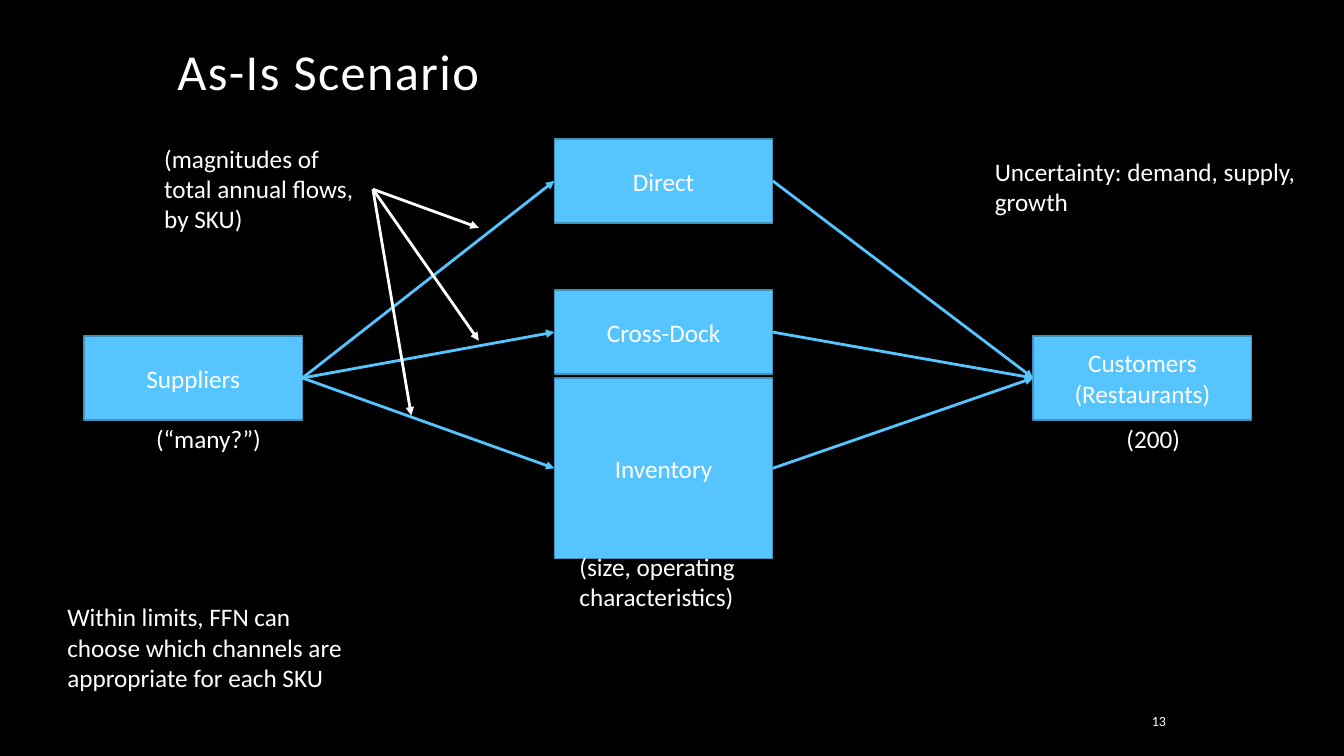
"""Build the As-Is Scenario supply network slide."""
from dataclasses import dataclass

from lxml import etree
from pptx import Presentation
from pptx.dml.color import RGBColor
from pptx.enum.shapes import MSO_CONNECTOR, MSO_SHAPE
from pptx.enum.text import MSO_ANCHOR, MSO_AUTO_SIZE, PP_ALIGN
from pptx.oxml.ns import qn
from pptx.util import Pt

RECT = MSO_SHAPE.RECTANGLE
STRAIGHT = MSO_CONNECTOR.STRAIGHT
TOP, MIDDLE = MSO_ANCHOR.TOP, MSO_ANCHOR.MIDDLE
LEFT, CENTER, RIGHT = PP_ALIGN.LEFT, PP_ALIGN.CENTER, PP_ALIGN.RIGHT
NO_FIT = MSO_AUTO_SIZE.NONE
LEFT_SIDE, RIGHT_SIDE = 1, 3
FONT = "Calibri"
BLACK, WHITE, BLUE, EDGE = "000000", "FFFFFF", "56C5FF", "4092BD"


@dataclass
class Node:
    name: str
    x: float
    y: float
    h: float = 60
    w: float = 156


@dataclass
class Note:
    text: str
    x: float
    y: float
    w: float
    h: float
    wrap: bool = True
    size: float = 18
    align: PP_ALIGN = LEFT
    anchor: MSO_ANCHOR = TOP


SUPPLIERS = Node("Suppliers", 60, 240)
CUSTOMERS = Node("Customers (Restaurants)", 738, 240)
CHANNELS = [
    Node("Direct", 396, 99.25),
    Node("Cross-Dock", 396, 207.25),
    Node("Inventory", 396, 270, h=129),
]
NOTES = [
    Note("(200)", 797.5, 298.8, 53.5, 29, wrap=False),
    Note("(“many?”)", 104.4, 298.8, 89, 29, wrap=False),
    Note("(size, operating characteristics)", 406.8, 390.2, 147, 51),
    Note("Within limits, FFN can choose which channels are appropriate for each SKU",
         41, 426.2, 229, 72.7),
    Note("Uncertainty: demand, supply, growth", 703.5, 108, 229, 51),
    Note("(magnitudes of total annual flows, by SKU)", 110.2, 98.7, 156, 72.7),
    Note("13", 774, 504, 66, 21.6, size=10, align=RIGHT, anchor=MIDDLE),
]
FLOW_START = (266.4, 135.2)
FLOW_ENDS = [(342, 162.7), (342, 243.4), (293.8, 296.8)]


def rgb(value: str) -> RGBColor:
    return RGBColor.from_string(value)


def write(tf, text: str, *, size: float = 18, align=LEFT, anchor=TOP,
          wrap: bool = True, line_spacing: float = 1, tracking: int = 0) -> None:
    tf.auto_size = NO_FIT
    tf.word_wrap = wrap
    tf.vertical_anchor = anchor
    p = tf.paragraphs[0]
    p.alignment = align
    p.line_spacing = line_spacing
    r = p.add_run()
    r.text = text
    r.font.name = FONT
    r.font.size = Pt(size)
    r.font.color.rgb = rgb(WHITE)
    if tracking:
        r.font._element.set("spc", str(tracking))


def add_node(s, node: Node):
    sp = s.shapes.add_shape(RECT, Pt(node.x), Pt(node.y), Pt(node.w), Pt(node.h))
    sp.shadow.inherit = False
    sp.fill.solid()
    sp.fill.fore_color.rgb = rgb(BLUE)
    sp.line.color.rgb = rgb(EDGE)
    sp.line.width = Pt(1)
    write(sp.text_frame, node.name, align=CENTER, anchor=MIDDLE)
    return sp


def add_note(s, note: Note) -> None:
    sp = s.shapes.add_textbox(Pt(note.x), Pt(note.y), Pt(note.w), Pt(note.h))
    write(sp.text_frame, note.text, size=note.size, align=note.align,
          anchor=note.anchor, wrap=note.wrap)


def add_arrow(s, color: str, start: tuple = (0, 0), end: tuple = (0, 0)):
    cxn = s.shapes.add_connector(STRAIGHT, *map(Pt, start + end))
    cxn.line.color.rgb = rgb(color)
    cxn.line.width = Pt(2)
    ln = cxn.line._get_or_add_ln()
    etree.SubElement(ln, qn("a:tailEnd"), type="triangle")
    etree.SubElement(cxn._element.spPr, qn("a:effectLst"))
    return cxn


def link(s, source, target) -> None:
    cxn = add_arrow(s, BLUE)
    cxn.begin_connect(source, RIGHT_SIDE)
    cxn.end_connect(target, LEFT_SIDE)


def main() -> None:
    prs = Presentation()
    prs.slide_width, prs.slide_height = Pt(960), Pt(540)
    s = prs.slides.add_slide(prs.slide_layouts[5])
    s.background.fill.solid()
    s.background.fill.fore_color.rgb = rgb(BLACK)

    title = s.shapes.title
    title.left, title.top, title.width, title.height = map(Pt, (119.5, 30.2, 720, 108))
    write(title.text_frame, "As-Is Scenario", size=36, line_spacing=0.9, tracking=100)

    suppliers, customers, *channels = [
        add_node(s, node) for node in (SUPPLIERS, CUSTOMERS, *CHANNELS)]
    for channel in channels:
        link(s, suppliers, channel)
        link(s, channel, customers)
    for end in FLOW_ENDS:
        add_arrow(s, WHITE, FLOW_START, end)
    for note in NOTES:
        add_note(s, note)
    prs.save("out.pptx")


if __name__ == "__main__":
    main()
